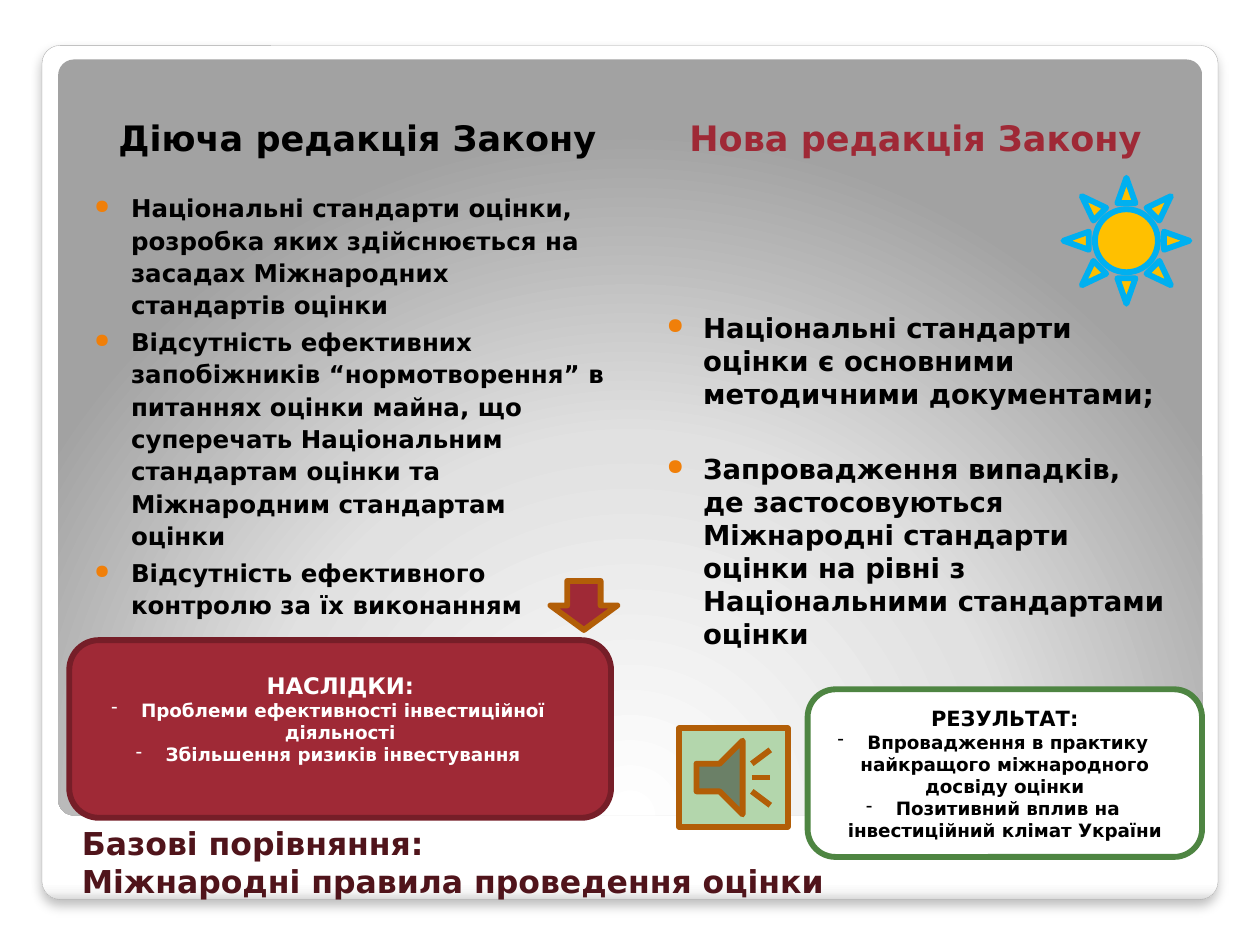
from dataclasses import dataclass
from typing import NamedTuple

from lxml.etree import SubElement
from pptx import Presentation
from pptx.dml.color import RGBColor
from pptx.enum.shapes import MSO_SHAPE as Preset
from pptx.enum.text import MSO_ANCHOR as Anchor, PP_ALIGN as Align
from pptx.oxml import parse_xml
from pptx.oxml.ns import nsdecls, qn
from pptx.util import Pt


class Box(NamedTuple):
    left: float
    top: float
    width: float
    height: float

    def emu(self):
        return [Pt(value) for value in self]


@dataclass(frozen=True)
class Theme:
    font: str = "DejaVu Sans"
    black: str = "000000"
    white: str = "FFFFFF"
    red: str = "9F2936"
    dark_red: str = "761E28"
    maroon: str = "50141B"
    orange: str = "F07F09"
    brown: str = "B25E07"
    green: str = "4E8542"
    pale_green: str = "B3D6AC"
    yellow: str = "FFC000"
    blue: str = "00B0F0"
    frame_line: str = "A4A4A4"
    title_size: float = 18
    heading_size: float = 20
    current_size: float = 14
    new_size: float = 15.7
    item_size: float = 10.5
    outline: float = 3.35


THEME = Theme()
FRAME_STOPS = [(0, "FFFFFF"), (98, "FFFFFF"), (99, "F7F7F7"), (100, "DADADA")]
PANEL_STOPS = [(0, "FFFFFF"), (55, "E1E1E1"), (100, "A2A2A2")]
LINEAR = '<a:lin ang="5400000" scaled="0"/>'
RADIAL = '<a:path path="circle"><a:fillToRect l="50000" t="175000" r="50000" b="-75000"/></a:path>'


def add_preset(slide, preset, box, fill=None, line=None, width=THEME.outline):
    shape = slide.shapes.add_shape(preset, *box.emu())
    shape.shadow.inherit = False
    if fill:
        shape.fill.solid()
        shape.fill.fore_color.rgb = RGBColor.from_string(fill)
    else:
        shape.fill.background()
    if line:
        shape.line.color.rgb = RGBColor.from_string(line)
        shape.line.width = Pt(width)
    else:
        shape.line.fill.background()
    return shape


def set_gradient(shape, stops, direction):
    stop_xml = "".join(
        f'<a:gs pos="{position * 1000}"><a:srgbClr val="{color}"/></a:gs>'
        for position, color in stops
    )
    gradient = parse_xml(
        f'<a:gradFill {nsdecls("a")} rotWithShape="1"><a:gsLst>{stop_xml}</a:gsLst>'
        f"{direction}</a:gradFill>"
    )
    properties = shape.element.spPr
    properties.replace(properties.find(qn("a:noFill")), gradient)


def add_soft_shadow(shape):
    effects = shape.element.spPr.find(qn("a:effectLst"))
    shadow = SubElement(effects, qn("a:outerShdw"), blurRad=str(Pt(6)), dist=str(Pt(4)),
                        dir="5400000", algn="t", rotWithShape="0")
    color = SubElement(shadow, qn("a:srgbClr"), val=THEME.black)
    SubElement(color, qn("a:alpha"), val="25000")


def set_frame(text_frame, anchor, insets=(7.2, 3.6, 7.2, 3.6)):
    text_frame.word_wrap = True
    text_frame.vertical_anchor = anchor
    (text_frame.margin_left, text_frame.margin_top,
     text_frame.margin_right, text_frame.margin_bottom) = map(Pt, insets)


def add_run(paragraph, text, size, color):
    run = paragraph.add_run()
    run.text = text
    run.font.name = THEME.font
    run.font.size = Pt(size)
    run.font.bold = True
    run.font.color.rgb = RGBColor.from_string(color)


def add_bullet(paragraph, character, margin, indent, color=None, percent=100):
    properties = paragraph._p.get_or_add_pPr()
    properties.set("marL", str(Pt(margin)))
    properties.set("indent", str(Pt(indent)))
    if color:
        SubElement(SubElement(properties, qn("a:buClr")), qn("a:srgbClr"), val=color)
        SubElement(properties, qn("a:buSzPct"), val=str(percent * 1000))
    SubElement(properties, qn("a:buChar"), char=character)


def add_background(slide, box):
    frame = add_preset(slide, Preset.ROUNDED_RECTANGLE, box, line=THEME.frame_line, width=0.16)
    set_gradient(frame, FRAME_STOPS, LINEAR)
    add_soft_shadow(frame)
    panel_box = Box(box.left + 9.2, box.top + 8, box.width - 18.2, 432)
    panel = add_preset(slide, Preset.ROUNDED_RECTANGLE, panel_box)
    set_gradient(panel, PANEL_STOPS, RADIAL)
    for shape in (frame, panel):
        shape.adjustments[0] = 0.021


def place_title(slide, box, lines):
    title = slide.shapes.title
    title.left, title.top, title.width, title.height = box.emu()
    title.element.getparent().append(title.element)
    set_frame(title.text_frame, Anchor.BOTTOM)
    paragraph = title.text_frame.paragraphs[0]
    paragraph.alignment = Align.LEFT
    for index, line in enumerate(lines):
        if index:
            paragraph.add_line_break()
        add_run(paragraph, line, THEME.title_size, THEME.maroon)


def add_heading(slide, box, text, color):
    text_frame = slide.shapes.add_textbox(*box.emu()).text_frame
    set_frame(text_frame, Anchor.MIDDLE, (11, 7.2, 7.2, 3.6))
    paragraph = text_frame.paragraphs[0]
    paragraph.alignment = Align.CENTER
    paragraph.space_before = Pt(2.5)
    add_run(paragraph, text, THEME.heading_size, color)


def add_list(slide, box, items, size, spacing, gap, top_inset=7.2):
    text_frame = slide.shapes.add_textbox(*box.emu()).text_frame
    set_frame(text_frame, Anchor.TOP, (14.4, top_inset, 7.2, 3.6))
    for index, item in enumerate(items):
        paragraph = text_frame.add_paragraph() if index else text_frame.paragraphs[0]
        paragraph.line_spacing = spacing
        paragraph.space_before = Pt(gap if index else 2.5)
        add_bullet(paragraph, "●", 20.9, -20.9, THEME.orange, 80)
        add_run(paragraph, item, size, THEME.black)


def add_callout(slide, box, heading, heading_size, items, colors, bottom_inset=3.6):
    fill, line, text_color = colors
    shape = add_preset(slide, Preset.ROUNDED_RECTANGLE, box, fill, line)
    text_frame = shape.text_frame
    set_frame(text_frame, Anchor.MIDDLE, (12, 3.6, 12, bottom_inset))
    paragraph = text_frame.paragraphs[0]
    paragraph.alignment = Align.CENTER
    add_run(paragraph, heading, heading_size, text_color)
    for item in items:
        paragraph = text_frame.add_paragraph()
        paragraph.alignment = Align.CENTER
        add_bullet(paragraph, "-", 0, -17)
        add_run(paragraph, item, THEME.item_size, text_color)


def add_current_column(slide, box):
    left, top, width, _ = box
    add_heading(slide, Box(left + 8, top, width - 6, 62.6), "Діюча редакція Закону", THEME.black)
    add_preset(slide, Preset.DOWN_ARROW, Box(left + 275, top + 286.6, 38.2, 28), THEME.red, THEME.brown)
    add_callout(slide, Box(left, top + 320.4, width - 6, 101.5), "НАСЛІДКИ:", 13,
                ["Проблеми ефективності інвестиційної діяльності", "Збільшення ризиків інвестування"],
                (THEME.red, THEME.dark_red, THEME.white), 16)
    add_list(slide, Box(left, top + 56.2, width, 253.4), [
        "Національні стандарти оцінки, розробка яких здійснюється на засадах Міжнародних стандартів оцінки",
        "Відсутність ефективних запобіжників “нормотворення” в питаннях оцінки майна, що суперечать "
        "Національним стандартам оцінки та Міжнародним стандартам оцінки",
        "Відсутність ефективного контролю за їх виконанням",
    ], THEME.current_size, 1.1, 2.5)


def add_new_column(slide, box):
    left, top, width, _ = box
    add_heading(slide, Box(left, top, width, 62.6), "Нова редакція Закону", THEME.red)
    add_preset(slide, Preset.ACTION_BUTTON_SOUND, Box(left + 21.6, top + 370.8, 62, 56.2),
               THEME.pale_green, THEME.brown)
    add_callout(slide, Box(left + 95, top + 348.5, 225.4, 95.8), "РЕЗУЛЬТАТ:", 12,
                ["Впровадження в практику найкращого міжнародного досвіду оцінки",
                 "Позитивний вплив на інвестиційний клімат України"],
                (THEME.white, THEME.green, THEME.black))
    add_list(slide, Box(left, top + 68.4, width, 275), [
        "Національні стандарти оцінки є основними методичними документами;",
        "Запровадження випадків, де застосовуються Міжнародні стандарти оцінки на рівні з "
        "Національними стандартами оцінки",
    ], THEME.new_size, 1, 24, 64)
    add_preset(slide, Preset.SUN, Box(left + 241.2, top + 56.2, 72, 72), THEME.yellow, THEME.blue)


def main():
    presentation = Presentation()
    presentation.slide_width, presentation.slide_height = Pt(720), Pt(540)
    slide = presentation.slides.add_slide(presentation.slide_layouts[5])
    add_background(slide, Box(24, 26, 672, 488))
    place_title(slide, Box(39.6, 461.5, 644.4, 56.2), ["Базові порівняння:", "Міжнародні правила проведення оцінки"])
    add_current_column(slide, Box(39.6, 45.4, 315.6, 422))
    add_new_column(slide, Box(366.5, 45.4, 309.6, 445))
    presentation.save("out.pptx")


if __name__ == "__main__":
    main()
